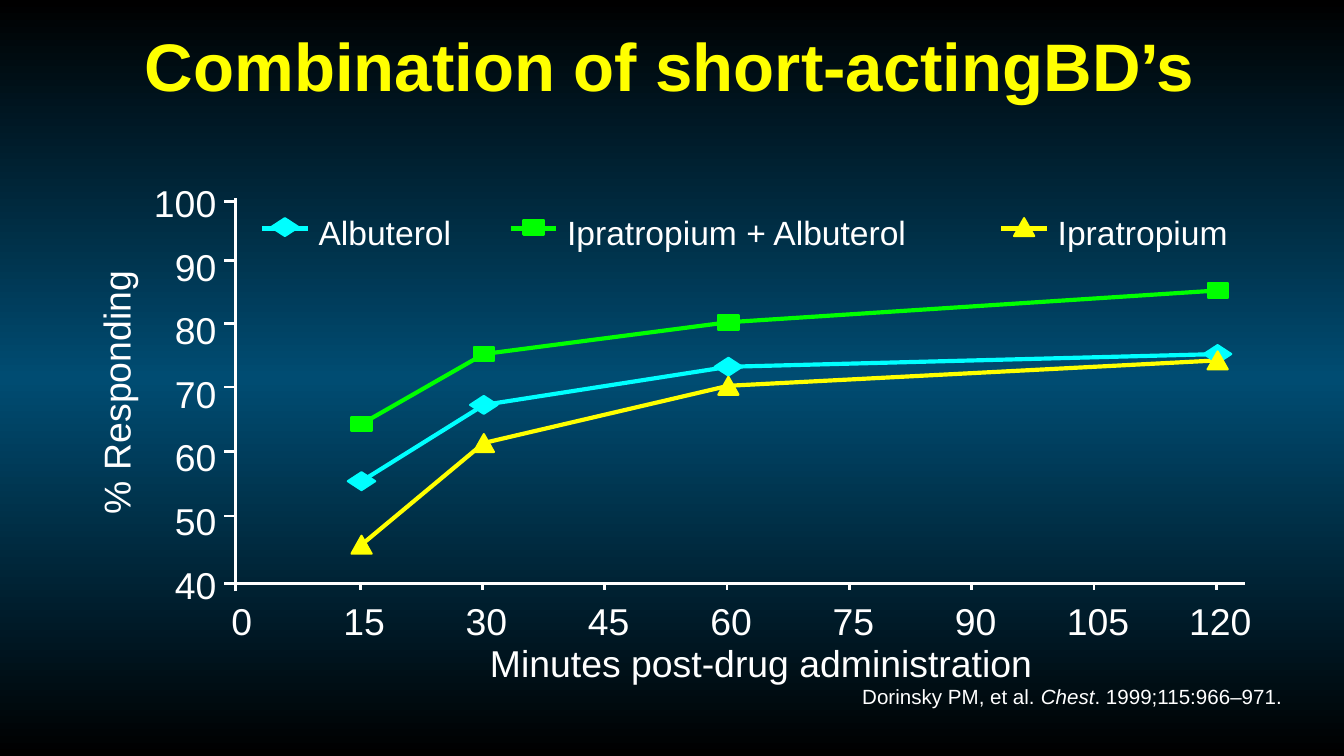
import copy
from dataclasses import dataclass

import lxml.etree
import pptx
import pptx.dml.color
import pptx.enum.shapes
import pptx.enum.text
import pptx.oxml.ns
import pptx.util


@dataclass(frozen=True)
class Theme:
    font: str = "Arial"
    white: str = "FFFFFF"
    cyan: str = "00FFFF"
    green: str = "00FF00"
    yellow: str = "FFFF00"
    edge: str = "000000"
    middle: str = "004C72"
    title: int = 36
    axis: int = 20
    legend: int = 18
    source: int = 11


def rgb(code):
    return pptx.dml.color.RGBColor.from_string(code)


def style(r, size, color):
    r.font.name = theme.font
    r.font.size = pptx.util.Pt(size)
    r.font.color.rgb = rgb(color)


theme = Theme()
qn = pptx.oxml.ns.qn
MSO = pptx.enum.shapes.MSO_SHAPE
ALIGN = pptx.enum.text.PP_ALIGN

prs = pptx.Presentation()
prs.slide_width = pptx.util.Inches(10)
prs.slide_height = prs.slide_width * 9 // 16
s = prs.slides.add_slide(prs.slide_layouts[5])
cell = prs.slide_width // 100

fill = s.background.fill
fill.gradient()
fill.gradient_angle = 90
stops = s._element.find(".//" + qn("a:gsLst"))
stops.append(copy.deepcopy(stops[0]))
for stop, position, color in zip(
    fill.gradient_stops, (0, 0.5, 1), (theme.edge, theme.middle, theme.edge)
):
    stop.position = position
    stop.color.rgb = rgb(color)

sp = s.shapes.title
sp.left, sp.top, sp.width, sp.height = [int(n * cell) for n in (1.8, 1.25, 96.1, 7.1)]
tf = sp.text_frame
tf.text = "Combination of short-actingBD’s"
tf.auto_size = pptx.enum.text.MSO_AUTO_SIZE.NONE
tf.vertical_anchor = pptx.enum.text.MSO_ANCHOR.MIDDLE
p = tf.paragraphs[0]
p.alignment = ALIGN.CENTER
style(p.runs[0], theme.title, theme.yellow)
p.runs[0].font.bold = True

origin_x, origin_y = 17.8, 42.9
step_x, step_y = 9.1, 4.73
minutes = (15, 30, 60, 120)
columns = [origin_x + m / 15 * step_x for m in minutes]
tick_rows = (43.4, 38.4, 33.6, 28.8, 24.1, 19.4, 15)
legend_row = 17

series = [
    ("Albuterol", theme.cyan, MSO.DIAMOND, 2.04, 1.33, (55, 67, 73, 75), 21.2, 10.5),
    ("Ipratropium + Albuterol", theme.green, MSO.RECTANGLE, 1.5, 1.1, (64, 75, 80, 85), 39.7, 26),
    ("Ipratropium", theme.yellow, MSO.ISOSCELES_TRIANGLE, 1.5, 1.33, (45, 61, 70, 74), 76.2, 13.2),
]

lines = [
    (16.7, tick_rows[0], 92.6, tick_rows[0], theme.white, 1.5),
    (17.5, 44, 17.5, 14.7, theme.white, 1.5),
]
texts = [
    (17.5, 47.65, 78.3, "Minutes post-drug administration", theme.axis, ALIGN.CENTER, 0),
    (-1.5, 27.5, 20.3, "% Responding", theme.axis, ALIGN.CENTER, 270),
    (62.4, 50.9, 33, "Dorinsky PM, et al. |Chest|. 1999;115:966–971.", theme.source, ALIGN.RIGHT, 0),
]
for i, row in enumerate(tick_rows):
    if i:
        lines.append((16.7, row, 17.4, row, theme.white, 1 if i == 3 else 1.5))
    texts.append((11.4, 41.8 - i * step_y, 4.7, str(40 + 10 * i), theme.axis, ALIGN.RIGHT, 0))
for i in range(9):
    x = origin_x + i * step_x
    if i:
        lines.append((x - 0.1, 43.9, x - 0.1, 43.5, theme.white, 1.5))
    texts.append((x - 2.15, 44.5, 4.7, str(15 * i), theme.axis, ALIGN.CENTER, 0))
for name, color, marker, w, h, values, key_x, label_w in series:
    lines.append((key_x - 1.7, legend_row, key_x + 1.7, legend_row, color, 2.25))
    texts.append((key_x + 2.5, 15.8, label_w, name, theme.legend, ALIGN.LEFT, 0))

for x1, y1, x2, y2, color, weight in lines:
    c = s.shapes.add_connector(
        pptx.enum.shapes.MSO_CONNECTOR.STRAIGHT, *[int(n * cell) for n in (x1, y1, x2, y2)]
    )
    c.line.color.rgb = rgb(color)
    c.line.width = pptx.util.Pt(weight)
    lxml.etree.SubElement(c._element.spPr, qn("a:effectLst"))

for name, color, marker, w, h, values, key_x, label_w in series:
    points = [
        (int(x * cell), int((origin_y - (v - 40) / 10 * step_y) * cell))
        for x, v in zip(columns, values)
    ]
    builder = s.shapes.build_freeform(*points[0])
    builder.add_line_segments(points[1:], close=False)
    sp = builder.convert_to_shape()
    sp.shadow.inherit = False
    sp.fill.background()
    sp.line.color.rgb = rgb(color)
    sp.line.width = pptx.util.Pt(2.25)

for name, color, marker, w, h, values, key_x, label_w in series:
    centres = [(x, origin_y - (v - 40) / 10 * step_y) for x, v in zip(columns, values)]
    for x, y in centres + [(key_x, legend_row - 0.1)]:
        sp = s.shapes.add_shape(
            marker, *[int(n * cell) for n in (x - w / 2, y - h / 2, w, h)]
        )
        sp.shadow.inherit = False
        sp.fill.solid()
        sp.fill.fore_color.rgb = rgb(color)
        sp.line.color.rgb = rgb(color)
        sp.line.width = pptx.util.Pt(1.13)

for left, top, width, text, size, align, turn in texts:
    height = size * 0.17
    sp = s.shapes.add_textbox(*[int(n * cell) for n in (left, top, width, height)])
    sp.rotation = turn
    tf = sp.text_frame
    tf.word_wrap = True
    tf.margin_left = tf.margin_right = tf.margin_top = tf.margin_bottom = 0
    p = tf.paragraphs[0]
    p.alignment = align
    for i, part in enumerate(text.split("|")):
        r = p.add_run()
        r.text = part
        style(r, size, theme.white)
        r.font.italic = i == 1

prs.save("out.pptx")
